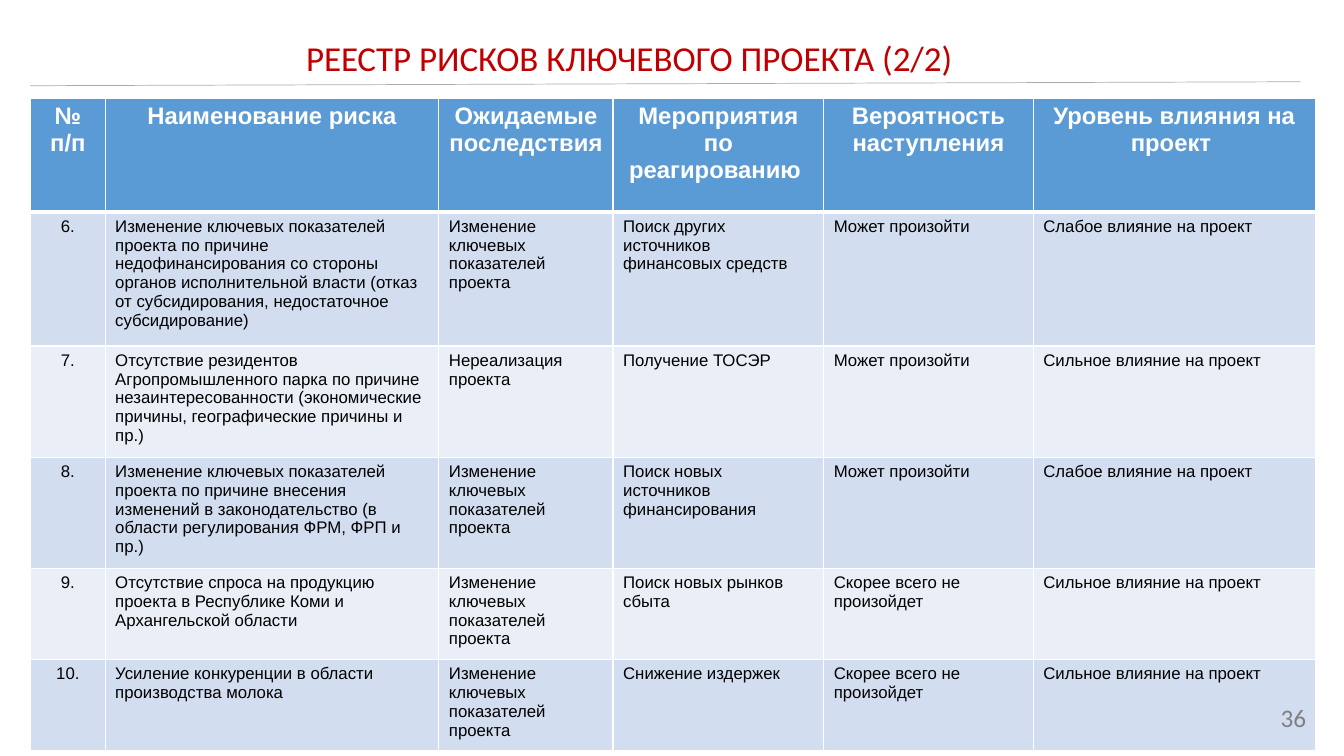
from dataclasses import dataclass

from lxml.etree import SubElement
from pptx import Presentation
from pptx.dml.color import RGBColor
from pptx.enum.shapes import MSO_CONNECTOR
from pptx.enum.text import MSO_ANCHOR, MSO_AUTO_SIZE, PP_ALIGN
from pptx.oxml.ns import qn
from pptx.util import Cm, Pt

TITLE = "РЕЕСТР РИСКОВ КЛЮЧЕВОГО ПРОЕКТА (2/2) "
PAGE = "36"
HEADS = ["№ п/п", "Наименование риска", "Ожидаемые последствия ",
         "Мероприятия по реагированию ", "Вероятность наступления",
         "Уровень влияния на проект "]
CHANGE = "Изменение ключевых показателей проекта"
MAYBE, RARE = "Может произойти", "Скорее всего не произойдет"
WEAK, STRONG = "Слабое влияние на проект", "Сильное влияние на проект"
RISKS = [
    ("6.", "Изменение ключевых показателей проекта по причине "
     "недофинансирования со стороны органов исполнительной власти "
     "(отказ от субсидирования, недостаточное субсидирование)",
     CHANGE, "Поиск других источников финансовых средств", MAYBE, WEAK),
    ("7.", "Отсутствие резидентов Агропромышленного парка по причине "
     "незаинтересованности (экономические причины, географические причины "
     "и пр.)", "Нереализация проекта", "Получение ТОСЭР", MAYBE, STRONG),
    ("8.", "Изменение ключевых показателей проекта по причине внесения "
     "изменений в законодательство (в области регулирования ФРМ, ФРП и пр.)",
     CHANGE, "Поиск новых источников финансирования", MAYBE, WEAK),
    ("9.", "Отсутствие спроса на продукцию проекта в Республике Коми и "
     "Архангельской области", CHANGE, "Поиск новых рынков сбыта",
     RARE, STRONG),
    ("10.", "Усиление конкуренции в области производства молока",
     CHANGE, "Снижение издержек", RARE, STRONG),
]
WIDTHS = [1.88, 8.41, 4.39, 5.31, 5.28, 7.11]
HEIGHTS = [2.87, 3.38, 2.8, 2.8, 2.3, 2.3]


@dataclass(frozen=True)
class Theme:
    red: str = "C00000"
    rule: str = "AFABAB"
    head: str = "5B9BD5"
    bands: tuple = ("D2DEEF", "EAEFF7")
    white: str = "FFFFFF"
    black: str = "000000"
    gray: str = "808080"
    title: int = 25
    label: int = 17
    body: int = 12
    page: int = 18
    sans: str = "Arial"
    human: str = "Calibri"


THEME = Theme()


def rgb(code):
    return RGBColor.from_string(code)


def write(frame, text, size, color, face, align, bold=False):
    frame.text = text
    para = frame.paragraphs[0]
    para.alignment = align
    font = para.runs[0].font
    font.size, font.name, font.bold = Pt(size), face, bold
    font.color.rgb = rgb(color)


def edge(cell, base):
    """Draw white cell borders, with the bottom one base points wide."""
    props = cell._tc.get_or_add_tcPr()
    for side, width in (("L", 1), ("R", 1), ("T", 1), ("B", base)):
        line = SubElement(props, qn(f"a:ln{side}"), w=str(Pt(width)))
        fill = SubElement(line, qn("a:solidFill"))
        SubElement(fill, qn("a:srgbClr"), val=THEME.white)


def add_title(slide):
    title = slide.shapes.title
    title.left, title.top = Cm(7.37), Cm(0.79)
    title.width, title.height = Cm(17.17), Cm(1.32)
    frame = title.text_frame
    write(frame, TITLE, THEME.title, THEME.red, THEME.human, PP_ALIGN.CENTER)
    frame.word_wrap = False
    frame.auto_size = MSO_AUTO_SIZE.NONE
    frame.vertical_anchor = MSO_ANCHOR.TOP


def add_rule(slide):
    rule = slide.shapes.add_connector(
        MSO_CONNECTOR.STRAIGHT, Cm(0.76), Cm(2.16), Cm(32.77), Cm(2.06))
    rule.line.color.rgb = rgb(THEME.rule)
    rule.line.width = Pt(0.5)
    SubElement(rule._element.spPr, qn("a:effectLst"))


def add_risks(slide):
    rows = [HEADS, *RISKS]
    table = slide.shapes.add_table(
        len(rows), len(HEADS), Cm(0.77), Cm(2.47),
        Cm(sum(WIDTHS)), Cm(sum(HEIGHTS))).table
    for col, width in zip(table.columns, WIDTHS):
        col.width = Cm(width)
    for r, texts in enumerate(rows):
        table.rows[r].height = Cm(HEIGHTS[r])
        head = r == 0
        size, color, fill = (
            (THEME.label, THEME.white, THEME.head) if head
            else (THEME.body, THEME.black, THEME.bands[(r - 1) % 2]))
        for c, text in enumerate(texts):
            cell = table.cell(r, c)
            align = PP_ALIGN.CENTER if head or c == 0 else PP_ALIGN.LEFT
            write(cell.text_frame, text, size, color, THEME.sans, align, head)
            edge(cell, 3 if head else 1)
            cell.fill.solid()
            cell.fill.fore_color.rgb = rgb(fill)


def add_page(slide):
    box = slide.shapes.add_textbox(Cm(25.55), Cm(17.58), Cm(7.62), Cm(1.02))
    frame = box.text_frame
    frame.word_wrap = True
    frame.vertical_anchor = MSO_ANCHOR.MIDDLE
    write(frame, PAGE, THEME.page, THEME.gray, THEME.human, PP_ALIGN.RIGHT)


def main():
    deck = Presentation()
    deck.slide_width, deck.slide_height = Cm(33.87), Cm(19.05)
    slide = deck.slides.add_slide(deck.slide_layouts.get_by_name("Title Only"))
    add_title(slide)
    add_rule(slide)
    add_risks(slide)
    add_page(slide)
    deck.save("out.pptx")


if __name__ == "__main__":
    main()
